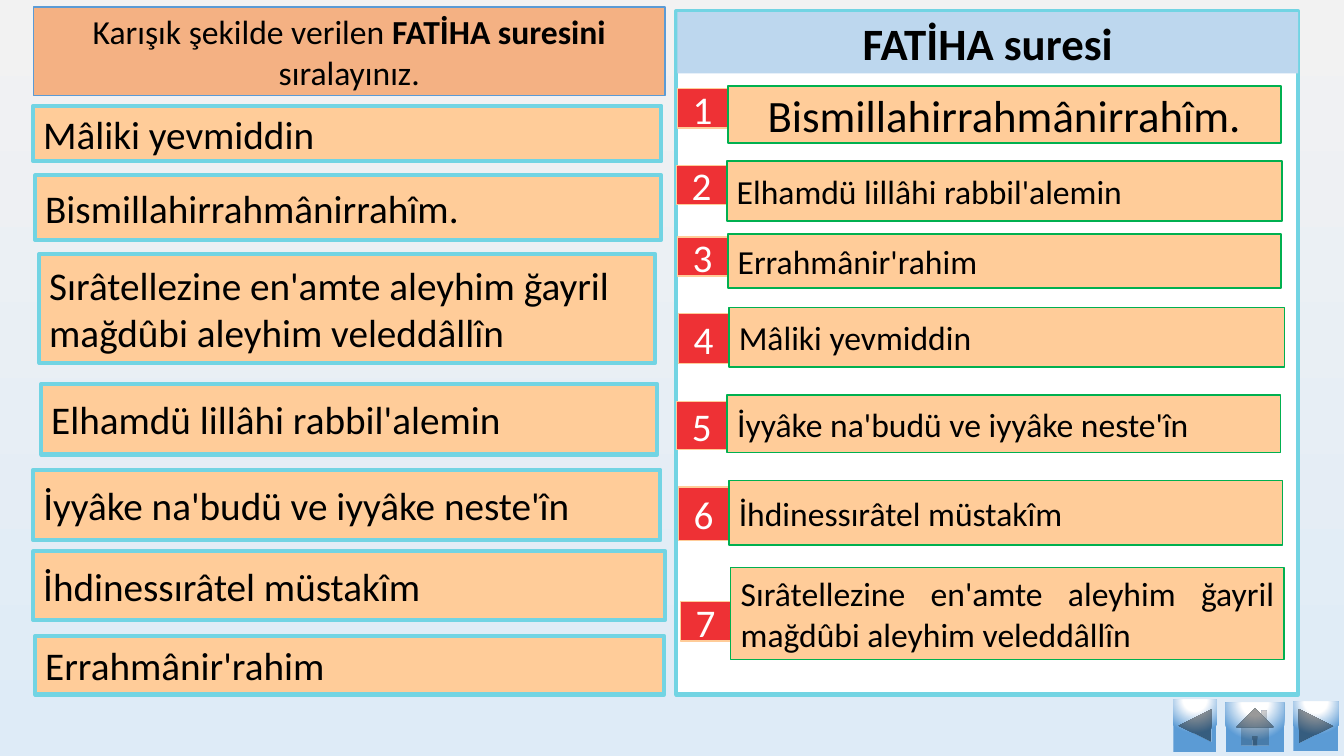
import copy

import pptx
import pptx.dml.color
import pptx.enum.shapes
import pptx.enum.text
import pptx.oxml
import pptx.oxml.ns
import pptx.util

PRESETS = pptx.enum.shapes.MSO_SHAPE
ALIGN = pptx.enum.text.PP_ALIGN
MIDDLE = pptx.enum.text.MSO_ANCHOR.MIDDLE
Pt = pptx.util.Pt

COLORS = {
    "white": "FFFFFF", "black": "000000", "turquoise": "72D4E3",
    "salmon": "F4B183", "blue": "5B9BD5", "peach": "FFCC99",
    "pale_blue": "BDD7EE", "red": "EE3135", "green": "00B050",
    "sky_top": "F2F2F2", "sky_bottom": "DEEBF7",
}

PANEL = (483.1, 7.9, 444.2, 488.2)
TASK = (23.8, 5, 451.4, 63.4)
TITLE = (483.8, 8.6, 443.5, 43.9)
TASK_RUNS = [("Karışık şekilde verilen ", False), ("FATİHA suresini ", True), ("sıralayınız.", False)]
TITLE_RUNS = [("FATİHA suresi", True)]

VERSES = [
    "Bismillahirrahmânirrahîm.",
    "Elhamdü lillâhi rabbil'alemin",
    "Errahmânir'rahim",
    "Mâliki yevmiddin",
    "İyyâke na'budü ve iyyâke neste'în",
    "İhdinessırâtel müstakîm",
    "Sırâtellezine en'amte aleyhim ğayril mağdûbi aleyhim veleddâllîn",
]

MIXED = [
    (4, (23.8, 75.6, 448.6, 39.6)),
    (1, (25.2, 125.3, 447.1, 46.1)),
    (7, (28.1, 181.4, 439.9, 77.8)),
    (2, (29.5, 274.3, 439.9, 50.4)),
    (5, (23.8, 335.5, 447.8, 50.4)),
    (6, (23.8, 393.8, 451.4, 49)),
    (3, (25.2, 454.3, 449.3, 41.8)),
]

NUMBER_WIDTH = 36
ORDERED = [
    {"left": 483.8, "number": (63.4, 28.1), "verse": (61.2, 395.3, 41), "border": 1.5, "size": 32, "align": ALIGN.CENTER},
    {"left": 483.1, "number": (118.1, 28.1), "verse": (115.2, 396.7, 42.5), "border": 1.5},
    {"left": 483.8, "number": (169.2, 28.1), "verse": (167, 395.3, 38.9), "border": 1.5},
    {"left": 484.6, "number": (223.9, 36), "verse": (219.6, 396.7, 42.5)},
    {"left": 483.4, "number": (286.6, 34.6), "verse": (282.2, 395.3, 41)},
    {"left": 484.6, "number": (347.8, 38.2), "verse": (343.4, 395.3, 46.1)},
    {"left": 486, "number": (429.8, 28.1), "verse": (405.4, 395.3, 65.5)},
]

BUTTONS = [
    (PRESETS.ACTION_BUTTON_BACK_OR_PREVIOUS, (838.1, 499.7, 31, 37.4)),
    (PRESETS.ACTION_BUTTON_FORWARD_OR_NEXT, (923.8, 501.1, 32.4, 35.3)),
    (PRESETS.ACTION_BUTTON_HOME, (875.5, 501.8, 41.8, 35.3)),
]
GLOW = (
    '<a:path xmlns:a="http://schemas.openxmlformats.org/drawingml/2006/main" path="circle">'
    '<a:fillToRect l="50000" t="-80000" r="50000" b="180000"/></a:path>'
)


def rgb(name):
    return pptx.dml.color.RGBColor.from_string(COLORS[name])


def add_box(slide, place, fill=None, line=None, preset=PRESETS.RECTANGLE):
    box = slide.shapes.add_shape(preset, *[Pt(length) for length in place])
    box.shadow.inherit = False
    if fill:
        box.fill.solid()
        box.fill.fore_color.rgb = rgb(fill)
    if line:
        color, width = line
        box.line.color.rgb = rgb(color)
        box.line.width = Pt(width)
    else:
        box.line.fill.background()
    return box


def write(box, runs, size, align, color="black"):
    box.text_frame.word_wrap = True
    box.text_frame.vertical_anchor = MIDDLE
    paragraph = box.text_frame.paragraphs[0]
    paragraph.alignment = align
    for text, bold in runs:
        run = paragraph.add_run()
        run.text = text
        run.font.color.rgb = rgb(color)
        for key, value in {"name": "Calibri", "size": Pt(size), "bold": bold}.items():
            setattr(run.font, key, value)


def paint_gradient(fill, first, last):
    fill.gradient()
    for stop, color, position in zip(fill.gradient_stops, (first, last), (0, 1)):
        stop.color.rgb = rgb(color)
        stop.position = position


def add_button(slide, preset, place):
    button = add_box(slide, place, preset=preset)
    paint_gradient(button.fill, "white", "blue")
    gradient = button._element.spPr.find(pptx.oxml.ns.qn("a:gradFill"))
    stops = gradient.find(pptx.oxml.ns.qn("a:gsLst"))
    plateau = copy.deepcopy(stops[0])
    plateau.set("pos", "35000")
    stops.insert(1, plateau)
    gradient.replace(gradient.find(pptx.oxml.ns.qn("a:lin")), pptx.oxml.parse_xml(GLOW))


def main():
    """Build the verse-ordering exercise slide."""
    deck = pptx.Presentation()
    deck.slide_width, deck.slide_height = Pt(960), Pt(540)
    slide = deck.slides.add_slide(deck.slide_layouts[6])
    sky = slide.background.fill
    paint_gradient(sky, "sky_top", "sky_bottom")
    sky.gradient_angle = 270

    add_box(slide, PANEL, "white", ("turquoise", 3))
    write(add_box(slide, TASK, "salmon", ("blue", 1)), TASK_RUNS, 24, ALIGN.CENTER)
    title = add_box(slide, TITLE, "pale_blue", preset=PRESETS.ROUNDED_RECTANGLE)
    title.adjustments[0] = 0
    write(title, TITLE_RUNS, 32, ALIGN.CENTER)

    for order, place in MIXED:
        card = add_box(slide, place, "peach", ("turquoise", 3))
        write(card, [(VERSES[order - 1], False)], 28, ALIGN.LEFT)

    for preset, place in BUTTONS:
        add_button(slide, preset, place)

    for order, (verse, row) in enumerate(zip(VERSES, ORDERED), 1):
        left = row["left"]
        top, height = row["number"]
        number = add_box(slide, (left, top, NUMBER_WIDTH, height), "red", ("peach", 1))
        write(number, [(str(order), False)], 28, ALIGN.CENTER, "white")
        answer = add_box(slide, (left + NUMBER_WIDTH, *row["verse"]), "peach", ("green", row.get("border", 1)))
        write(answer, [(verse, False)], row.get("size", 24), row.get("align", ALIGN.JUSTIFY))

    deck.save("out.pptx")


if __name__ == "__main__":
    main()
